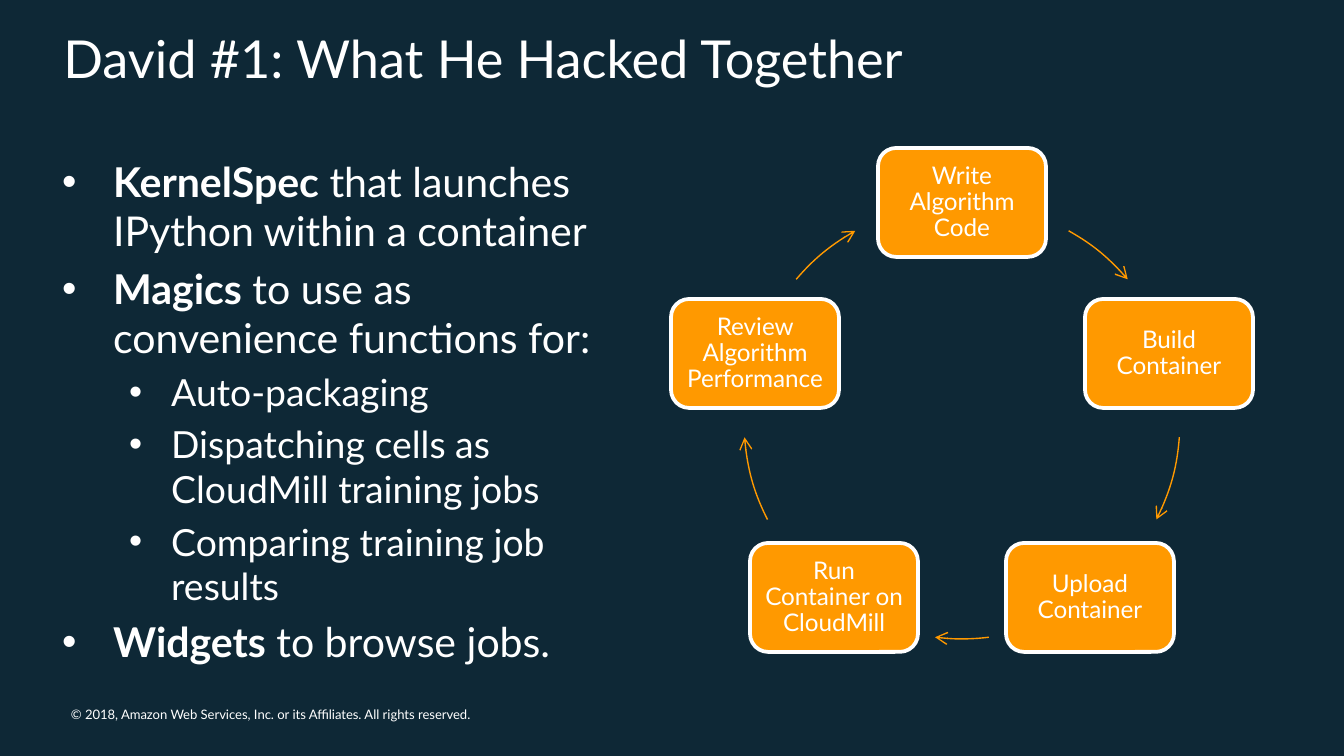
"""Build the slide on a notebook toolkit and its five-step container cycle."""
import dataclasses
import math
import typing

import lxml.etree
import pptx
import pptx.dml.color
import pptx.enum.shapes
import pptx.enum.text
import pptx.oxml.ns
import pptx.util

SCALE = 914400 / 134.4


@dataclasses.dataclass(frozen=True)
class Theme:
    font: str = "Lato"
    back: str = "0E2836"
    ink: str = "FFFFFF"
    accent: str = "FF9900"
    title: int = 28
    body: int = 22
    sub: int = 20
    step: int = 13
    foot: int = 7
    edge: float = 2
    arc: float = 0.75


class Box(typing.NamedTuple):
    left: int
    top: int
    width: int
    height: int


class Point(typing.NamedTuple):
    lead: str
    rest: str
    level: int = 0


class Step(typing.NamedTuple):
    label: str
    start: float
    end: float


class Ring(typing.NamedTuple):
    x: int
    y: int
    radius: int
    width: int
    height: int


THEME = Theme()
RING = Ring(962, 421, 218, 168, 109)
POINTS = [
    Point("KernelSpec", " that launches IPython within a container"),
    Point("Magics", " to use as convenience functions for:"),
    Point("", "Auto-packaging", 1),
    Point("", "Dispatching cells as CloudMill training jobs", 1),
    Point("", "Comparing training job results", 1),
    Point("Widgets", " to browse jobs."),
]
STEPS = [
    Step("Write Algorithm Code", 299.3, 319.5),
    Step("Build Container", 4.3, 26.9),
    Step("Upload Container", 82.9, 97.1),
    Step("Run Container on CloudMill", 153.1, 175.7),
    Step("Review Algorithm Performance", 220.5, 240.7),
]


def px(count: float) -> int:
    """Turn px into EMU."""
    return round(count * SCALE)


def place(box: Box) -> list[int]:
    """Turn a box into EMU lengths."""
    return [px(side) for side in box]


def tint(code: str) -> pptx.dml.color.RGBColor:
    """Read a hex colour."""
    return pptx.dml.color.RGBColor.from_string(code)


def style(para, size: float) -> None:
    """Give every run of a paragraph the theme font."""
    for run in para.runs:
        run.font.name = THEME.font
        run.font.size = pptx.util.Pt(size)
        run.font.color.rgb = tint(THEME.ink)


def inset(frame, side: int) -> None:
    """Set all four margins of a text frame."""
    frame.margin_left = frame.margin_right = px(side)
    frame.margin_top = frame.margin_bottom = px(side)


def add_title(slide, text: str, box: Box) -> None:
    """Fill and move the title placeholder."""
    title = slide.shapes.title
    title.left, title.top, title.width, title.height = place(box)
    frame = title.text_frame
    frame.text = text
    frame.auto_size = pptx.enum.text.MSO_AUTO_SIZE.NONE
    frame.vertical_anchor = pptx.enum.text.MSO_ANCHOR.MIDDLE
    para = frame.paragraphs[0]
    para.alignment = pptx.enum.text.PP_ALIGN.LEFT
    style(para, THEME.title)


def add_foot(slide, text: str, box: Box) -> None:
    """Write the copyright line."""
    frame = slide.shapes.add_textbox(*place(box)).text_frame
    inset(frame, 0)
    frame.text = text
    style(frame.paragraphs[0], THEME.foot)


def add_points(slide, points: list[Point], box: Box) -> None:
    """Write the bulleted list."""
    frame = slide.shapes.add_textbox(*place(box)).text_frame
    frame.word_wrap = True
    for rank, point in enumerate(points):
        para = frame.add_paragraph() if rank else frame.paragraphs[0]
        para.level = point.level
        margin, hang = (109, 42) if point.level else (51, 51)
        size = THEME.sub if point.level else THEME.body
        props = para._p.get_or_add_pPr()
        props.set("marL", str(px(margin)))
        props.set("indent", str(-px(hang)))
        face = lxml.etree.SubElement(props, pptx.oxml.ns.qn("a:buFont"))
        face.set("typeface", "Arial")
        mark = lxml.etree.SubElement(props, pptx.oxml.ns.qn("a:buChar"))
        mark.set("char", "•")
        if rank:
            para.space_before = pptx.util.Pt(0.2 * size)
        para.text = point.lead or point.rest
        if point.lead:
            para.runs[0].font.bold = True
            para.add_run().text = point.rest
        style(para, size)


def add_step(slide, label: str, box: Box) -> None:
    """Draw one step of the cycle."""
    kind = pptx.enum.shapes.MSO_SHAPE.ROUNDED_RECTANGLE
    shape = slide.shapes.add_shape(kind, *place(box))
    shape.shadow.inherit = False
    shape.fill.solid()
    shape.fill.fore_color.rgb = tint(THEME.accent)
    shape.line.color.rgb = tint(THEME.ink)
    shape.line.width = pptx.util.Pt(THEME.edge)
    frame = shape.text_frame
    frame.word_wrap = True
    frame.vertical_anchor = pptx.enum.text.MSO_ANCHOR.MIDDLE
    inset(frame, 7)
    frame.text = label
    para = frame.paragraphs[0]
    para.alignment = pptx.enum.text.PP_ALIGN.CENTER
    para.line_spacing = 0.9
    style(para, THEME.step)


def add_arc(slide, step: Step, box: Box) -> None:
    """Draw the curved arrow that leaves a step."""
    shape = slide.shapes.add_shape(pptx.enum.shapes.MSO_SHAPE.ARC, *place(box))
    shape.adjustments[0] = step.start * 0.6
    shape.adjustments[1] = step.end * 0.6
    shape.shadow.inherit = False
    shape.fill.background()
    shape.line.color.rgb = tint(THEME.accent)
    shape.line.width = pptx.util.Pt(THEME.arc)
    line = shape.line._get_or_add_ln()
    lxml.etree.SubElement(line, pptx.oxml.ns.qn("a:tailEnd")).set("type", "arrow")


def add_cycle(slide, steps: list[Step], ring: Ring) -> None:
    """Set the steps evenly around the ring."""
    span = 2 * ring.radius
    whole = Box(ring.x - ring.radius, ring.y - ring.radius, span, span)
    for rank, step in enumerate(steps):
        turn = math.tau * rank / len(steps)
        left = round(ring.x + ring.radius * math.sin(turn) - ring.width / 2)
        top = round(ring.y - ring.radius * math.cos(turn) - ring.height / 2)
        add_step(slide, step.label, Box(left, top, ring.width, ring.height))
        add_arc(slide, step, whole)


def main() -> None:
    """Build and save the deck."""
    deck = pptx.Presentation()
    deck.slide_width, deck.slide_height = px(1344), px(756)
    slide = deck.slides.add_slide(deck.slide_layouts[5])
    slide.background.fill.solid()
    slide.background.fill.fore_color.rgb = tint(THEME.back)
    add_foot(slide, "© 2018, Amazon Web Services, Inc. or its Affiliates. All rights reserved.", Box(71, 706, 445, 16))
    add_title(slide, "David #1: What He Hacked Together", Box(50, 17, 1206, 81))
    add_points(slide, POINTS, Box(49, 150, 594, 511))
    add_cycle(slide, STEPS, RING)
    deck.save("out.pptx")


if __name__ == "__main__":
    main()
